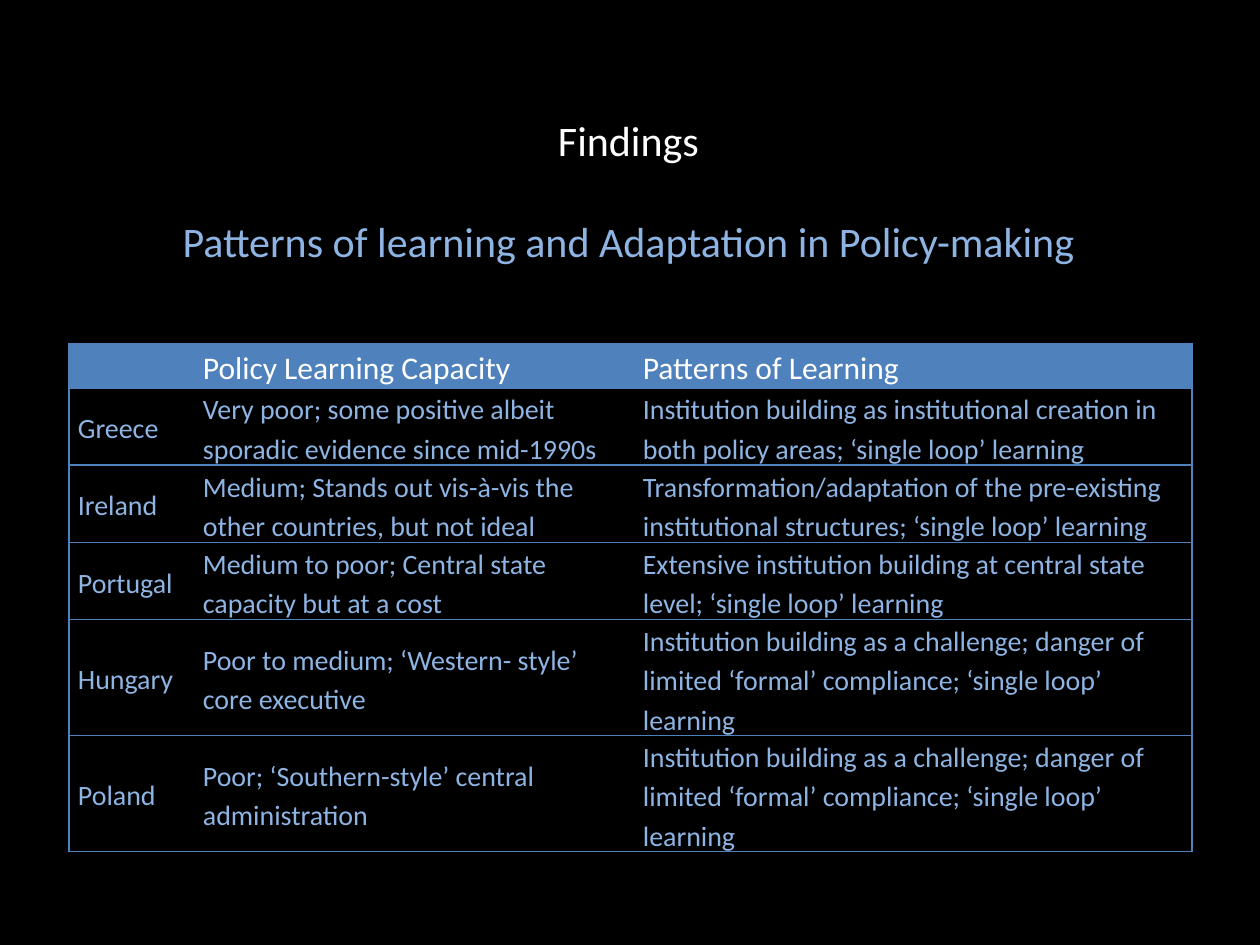
from dataclasses import dataclass

from lxml import etree
from pptx import Presentation
from pptx import util as u
from pptx.dml.color import RGBColor
from pptx.enum import text
from pptx.oxml.ns import qn

EMU_PER_PX = 914400 / 126
FONT = "Calibri"
BLACK, WHITE, PALE_BLUE, BLUE = "000000", "FFFFFF", "8EB4E3", "4F81BD"


@dataclass(frozen=True)
class Heading:
    wording: str
    color: str
    gap_after: int = 0


@dataclass(frozen=True)
class Row:
    country: str
    capacity: str
    pattern: str
    height: int
    size: int = 16
    color: str = PALE_BLUE
    fill: str = ""


HEADINGS = [
    Heading("Findings", WHITE, gap_after=29),
    Heading("Patterns of learning and Adaptation in Policy-making", PALE_BLUE),
]
CHALLENGE = ("Institution building as a challenge; danger of limited ‘formal’ "
             "compliance; ‘single loop’ learning")
ROWS = [
    Row("", "Policy Learning Capacity", "Patterns of Learning", 44, 18, WHITE, BLUE),
    Row("Greece", "Very poor; some positive albeit sporadic evidence since mid-1990s",
        "Institution building as institutional creation in both policy areas; "
        "‘single loop’ learning", 77),
    Row("Ireland", "Medium; Stands out vis-à-vis the other countries, but not ideal",
        "Transformation/adaptation of the pre-existing institutional structures; "
        "‘single loop’ learning", 77),
    Row("Portugal", "Medium to poor; Central state capacity but at a cost",
        "Extensive institution building at central state level; "
        "‘single loop’ learning", 77),
    Row("Hungary", "Poor to medium; ‘Western- style’ core executive", CHALLENGE, 116),
    Row("Poland", "Poor; ‘Southern-style’ central administration", CHALLENGE, 116),
]
COLUMN_WIDTHS = [125, 440, 558]


def px(length: int) -> u.Emu:
    return u.Emu(round(length * EMU_PER_PX))


def rgb(color: str) -> RGBColor:
    return RGBColor.from_string(color)


def style_runs(paragraph, size: int, color: str) -> None:
    font = paragraph.font
    for target in [font, *(run.font for run in paragraph.runs)]:
        target.name, target.size = FONT, u.Pt(size)
        target.color.rgb = rgb(color)


def set_borders(cell, visible: str) -> None:
    """Draw the sides named in visible (letters of LRTB) and clear the others."""
    properties = cell._tc.get_or_add_tcPr()
    for index, side in enumerate("LRTB"):
        line = etree.Element(qn(f"a:ln{side}"), w=str(u.Pt(1)))
        if side in visible:
            solid = etree.SubElement(line, qn("a:solidFill"))
            etree.SubElement(solid, qn("a:srgbClr"), val=BLUE)
        else:
            etree.SubElement(line, qn("a:noFill"))
        properties.insert(index, line)


def draw_headings(slide, headings: list[Heading]) -> None:
    frame = slide.shapes.add_textbox(px(49), px(108), px(1159), px(165)).text_frame
    frame.word_wrap = True
    frame.text = "\n".join(heading.wording for heading in headings)
    for paragraph, heading in zip(frame.paragraphs, headings):
        paragraph.alignment = text.PP_ALIGN.CENTER
        paragraph.space_after = u.Pt(heading.gap_after)
        style_runs(paragraph, 24, heading.color)


def fill_cell(cell, wording: str, row: Row) -> None:
    cell.vertical_anchor = text.MSO_ANCHOR.MIDDLE
    cell.margin_left = cell.margin_right = px(9)
    cell.margin_top = cell.margin_bottom = 0
    if row.fill:
        cell.fill.solid()
        cell.fill.fore_color.rgb = rgb(row.fill)
    else:
        cell.fill.background()
    cell.text_frame.text = wording
    paragraph = cell.text_frame.paragraphs[0]
    paragraph.line_spacing = 1.15
    paragraph.space_before = paragraph.space_after = u.Pt(3)
    style_runs(paragraph, row.size, row.color)


def draw_findings(slide, rows: list[Row]) -> None:
    findings = slide.shapes.add_table(
        len(rows), len(COLUMN_WIDTHS), px(69), px(344),
        px(sum(COLUMN_WIDTHS)), px(sum(row.height for row in rows))).table
    findings.first_row = findings.horz_banding = False
    for column, width in zip(findings.columns, COLUMN_WIDTHS):
        column.width = px(width)
    for index, row in enumerate(rows):
        findings.rows[index].height = px(row.height)
        wordings = (row.country, row.capacity, row.pattern)
        for column, (wording, sides) in enumerate(zip(wordings, ("LTB", "TB", "RTB"))):
            cell = findings.cell(index, column)
            fill_cell(cell, wording, row)
            set_borders(cell, sides)


def main() -> None:
    deck = Presentation()
    deck.slide_width, deck.slide_height = px(1260), px(945)
    slide = deck.slides.add_slide(deck.slide_layouts[6])
    # Background
    slide.background.fill.solid()
    slide.background.fill.fore_color.rgb = rgb(BLACK)
    # Headings above the table of countries
    draw_headings(slide, HEADINGS)
    draw_findings(slide, ROWS)
    deck.save("out.pptx")


if __name__ == "__main__":
    main()
